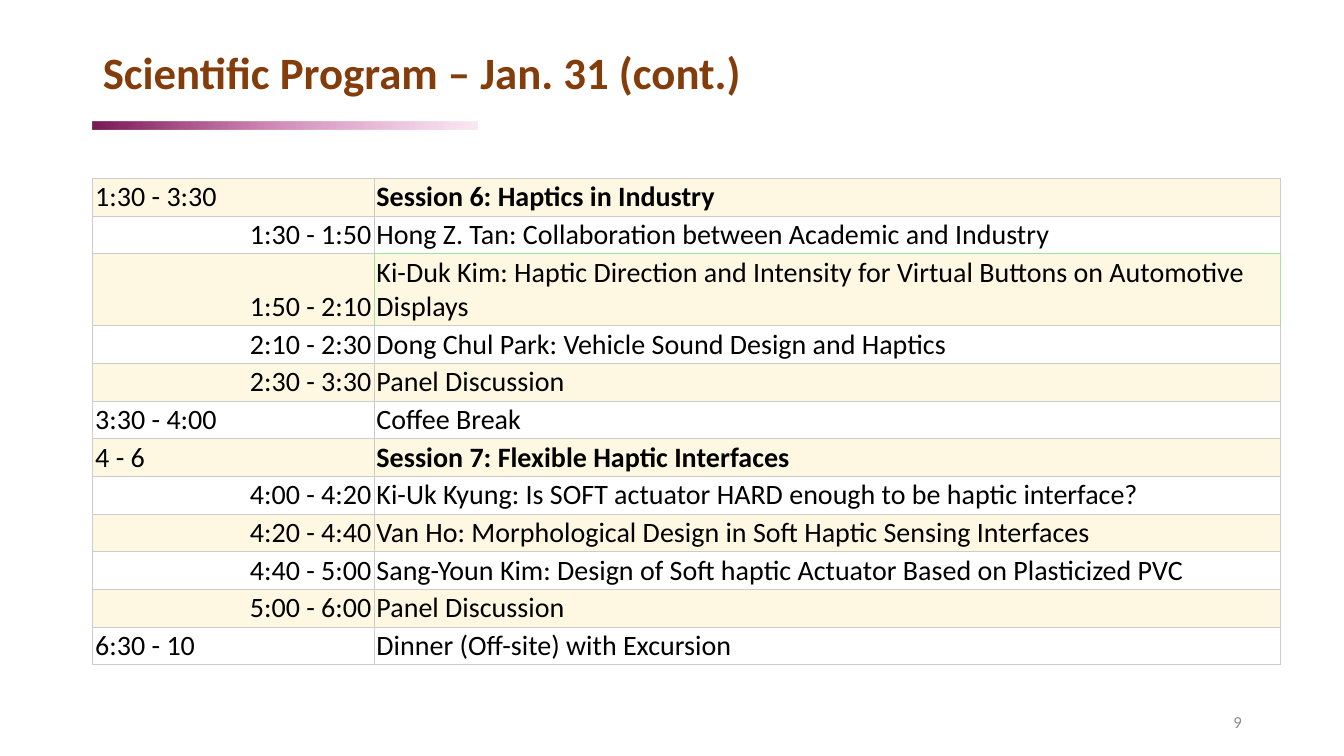
import pptx
import pptx.dml.color
import pptx.enum.shapes
import pptx.enum.text
import pptx.oxml
import pptx.oxml.ns
import pptx.util

Pt = pptx.util.Pt
ALIGN = pptx.enum.text.PP_ALIGN
ANCHOR = pptx.enum.text.MSO_ANCHOR
NS = pptx.oxml.ns.nsdecls("a")

LEFT = 66.24
GRAY, GREEN = "CCCCCC", "A0E3A1"
COLUMN_WIDTHS = (200.9, 647.3)
ROW_HEIGHT, TALL_ROW_HEIGHT = 26.85, 51.25

# Time, entry; a session heading is bold, a talk has its time on the right
PROGRAM = [
    ("1:30 - 3:30", "Session 6: Haptics in Industry", "session"),
    ("1:30 - 1:50", "Hong Z. Tan: Collaboration between Academic and Industry", "talk"),
    ("1:50 - 2:10", "Ki-Duk Kim: Haptic Direction and Intensity for Virtual Buttons on Automotive \nDisplays", "talk"),
    ("2:10 - 2:30", "Dong Chul Park: Vehicle Sound Design and Haptics", "talk"),
    ("2:30 - 3:30", "Panel Discussion", "talk"),
    ("3:30 - 4:00", "Coffee Break", "break"),
    ("4 - 6", "Session 7: Flexible Haptic Interfaces", "session"),
    ("4:00 - 4:20", "Ki-Uk Kyung: Is SOFT actuator HARD enough to be haptic interface?", "talk"),
    ("4:20 - 4:40", "Van Ho: Morphological Design in Soft Haptic Sensing Interfaces", "talk"),
    ("4:40 - 5:00", "Sang-Youn Kim: Design of Soft haptic Actuator Based on Plasticized PVC", "talk"),
    ("5:00 - 6:00", "Panel Discussion", "talk"),
    ("6:30 - 10", "Dinner (Off-site) with Excursion", "break"),
]
# Sides drawn in green, by row and column
GREEN_SIDES = {(1, 1): "B", (2, 0): "R", (2, 1): "LRT"}


def rgb(hex_color):
    return pptx.dml.color.RGBColor.from_string(hex_color)


class ProgramSlide:
    """Holds the slide and its text style."""

    font = "Calibri"

    def __init__(self, prs):
        self.s = prs.slides.add_slide(prs.slide_layouts[5])

    def add_text(self, p, text, size, color, bold=False, align=ALIGN.LEFT):
        p.alignment = align
        for i, line in enumerate(text.split("\n")):
            if i:
                p.add_line_break()
            r = p.add_run()
            r.text = line
            r.font.name, r.font.size, r.font.bold = self.font, Pt(size), bold
            r.font.color.rgb = rgb(color)

    def title(self, text, left, top, width, height):
        sp = self.s.shapes.title
        sp.left, sp.top, sp.width, sp.height = map(Pt, (left, top, width, height))
        tf = sp.text_frame
        tf.vertical_anchor = ANCHOR.MIDDLE
        tf.auto_size = pptx.enum.text.MSO_AUTO_SIZE.NONE
        tf.paragraphs[0].line_spacing = 0.9
        self.add_text(tf.paragraphs[0], text, 32, "843C0B", bold=True)

    def gradient_bar(self, left, top, width, height, stops):
        """Draw a bar from stops of (position %, colour, opacity %)."""
        sp = self.s.shapes.add_shape(pptx.enum.shapes.MSO_SHAPE.RECTANGLE,
                                     *map(Pt, (left, top, width, height)))
        sp.shadow.inherit = False
        sp.line.fill.background()
        stop_xml = "".join(
            f'<a:gs pos="{pos * 1000}"><a:srgbClr val="{color}">'
            f'<a:alpha val="{opacity * 1000}"/></a:srgbClr></a:gs>'
            for pos, color, opacity in stops)
        sp.fill.gradient()
        grad = sp.element.spPr.find(pptx.oxml.ns.qn("a:gradFill"))
        grad.getparent().replace(grad, pptx.oxml.parse_xml(
            f'<a:gradFill {NS} rotWithShape="1"><a:gsLst>{stop_xml}</a:gsLst>'
            '<a:lin ang="0" scaled="0"/></a:gradFill>'))

    def borders(self, cell, green_sides):
        for side in "LRTB":
            color = GREEN if side in green_sides else GRAY
            cell._tc.get_or_add_tcPr().append(pptx.oxml.parse_xml(
                f'<a:ln{side} {NS} w="{Pt(0.6)}"><a:solidFill>'
                f'<a:srgbClr val="{color}"/></a:solidFill></a:ln{side}>'))

    def cell(self, cell, text, fill, green_sides, bold, align):
        cell.margin_left = cell.margin_right = Pt(1.8)
        cell.margin_top = cell.margin_bottom = Pt(1.2)
        cell.vertical_anchor = ANCHOR.BOTTOM
        self.borders(cell, green_sides)
        cell.fill.solid()
        cell.fill.fore_color.rgb = rgb(fill)
        self.add_text(cell.text_frame.paragraphs[0], text, 20, "000000", bold, align)

    def program_table(self, left, top, rows):
        heights = [TALL_ROW_HEIGHT if "\n" in entry else ROW_HEIGHT
                   for _, entry, _ in rows]
        table = self.s.shapes.add_table(
            len(rows), len(COLUMN_WIDTHS), Pt(left), Pt(top),
            Pt(sum(COLUMN_WIDTHS)), Pt(sum(heights))).table
        table.first_row = table.horz_banding = False
        for column, width in zip(table.columns, COLUMN_WIDTHS):
            column.width = Pt(width)
        for i, (time, entry, kind) in enumerate(rows):
            table.rows[i].height = Pt(heights[i])
            fill = "FFFFFF" if i % 2 else "FEF8E3"
            time_align = ALIGN.RIGHT if kind == "talk" else ALIGN.LEFT
            self.cell(table.cell(i, 0), time, fill, GREEN_SIDES.get((i, 0), ""),
                      False, time_align)
            self.cell(table.cell(i, 1), entry, fill, GREEN_SIDES.get((i, 1), ""),
                      kind == "session", ALIGN.LEFT)

    def page_number(self, text, left, top, width, height):
        tf = self.s.shapes.add_textbox(*map(Pt, (left, top, width, height))).text_frame
        tf.word_wrap = True
        tf.vertical_anchor = ANCHOR.MIDDLE
        self.add_text(tf.paragraphs[0], text, 12, "8C8C8C", align=ALIGN.RIGHT)


def main():
    prs = pptx.Presentation()
    prs.slide_width, prs.slide_height = Pt(960), Pt(540)
    slide = ProgramSlide(prs)
    slide.gradient_bar(LEFT, 86.8, 274.6, 6, [
        (0, "771A55", 100), (50, "A92579", 50), (100, "C82C90", 10)])
    slide.title("Scientific Program – Jan. 31 (cont.)", LEFT, 28.8, 828, 49)
    slide.program_table(LEFT, 127.5, PROGRAM)
    slide.page_number("9", 813.6, 501, 80.6, 28.8)
    prs.save("out.pptx")


if __name__ == "__main__":
    main()
